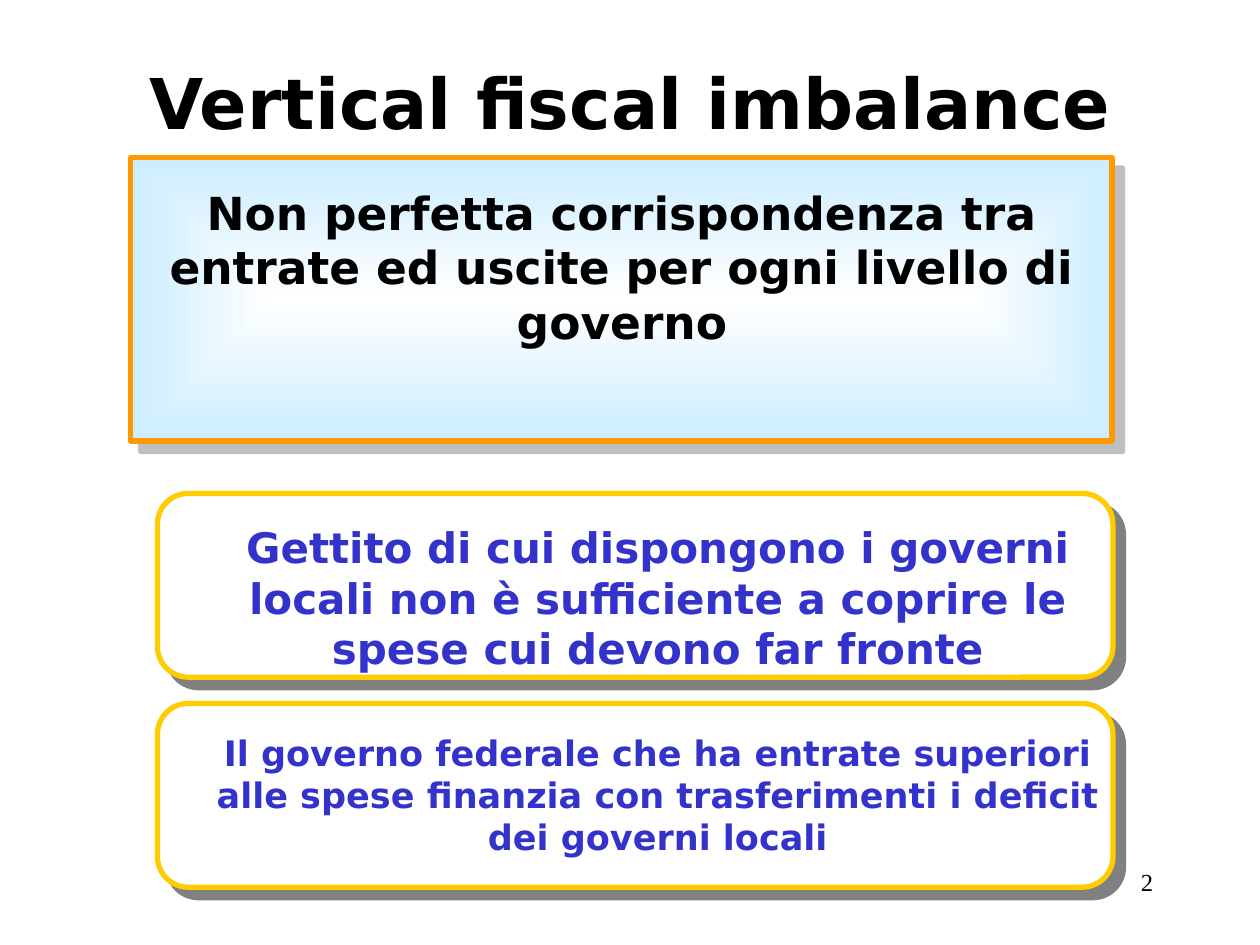
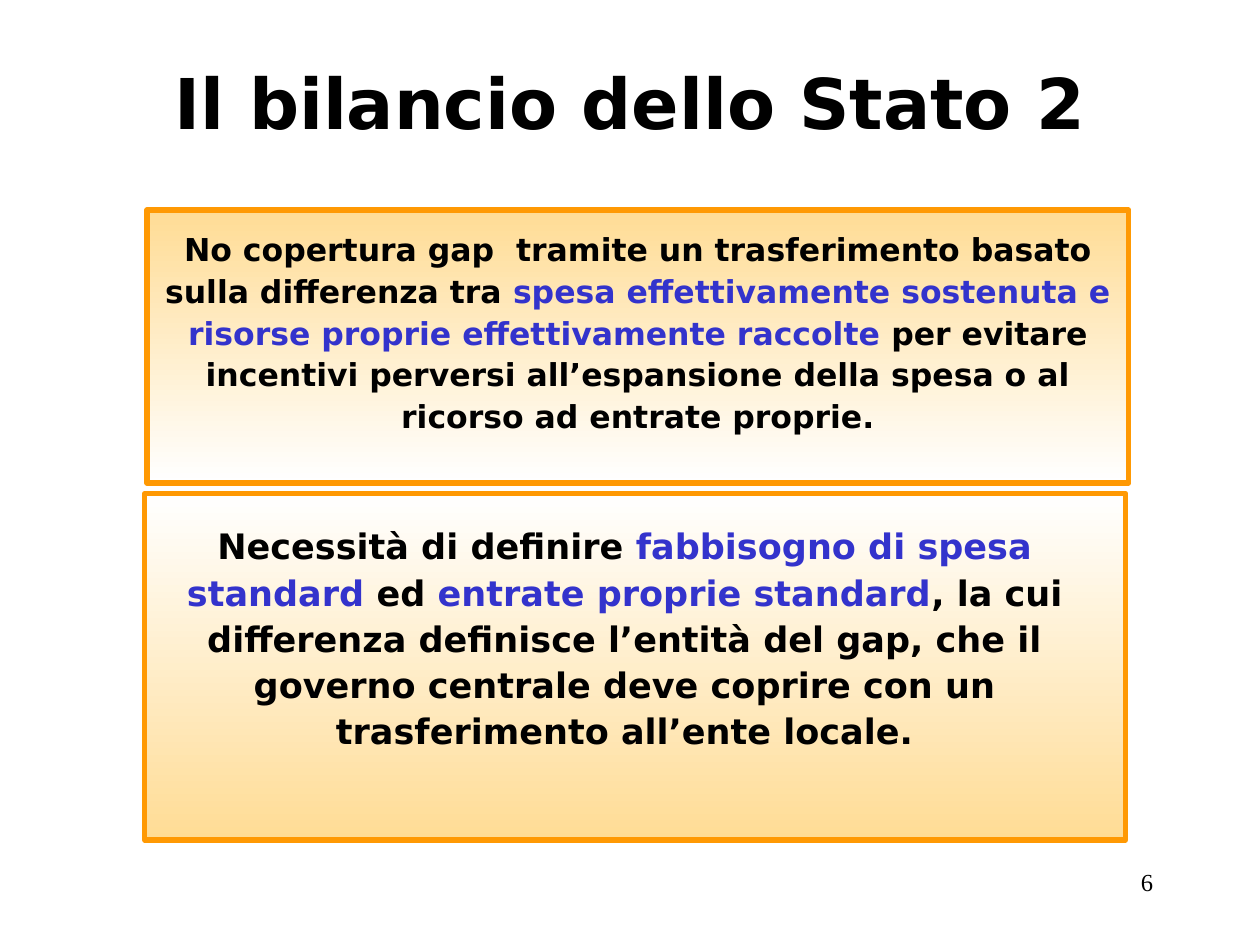
import pptx
import pptx.util
import pptx.dml.color
import pptx.enum.shapes
import pptx.enum.text
import pptx.oxml
import pptx.oxml.ns
from dataclasses import dataclass

Shape = pptx.enum.shapes.MSO_SHAPE
Align = pptx.enum.text.PP_ALIGN
Anchor = pptx.enum.text.MSO_ANCHOR
Fit = pptx.enum.text.MSO_AUTO_SIZE
Pt = pptx.util.Pt
NS = pptx.oxml.ns.nsdecls("a")


@dataclass(frozen=True)
class Theme:
    sans: str = "DejaVu Sans"
    serif: str = "Times New Roman"
    black: str = "000000"
    white: str = "FFFFFF"
    blue: str = "3333CC"
    sky: str = "CCECFF"
    sand: str = "FFDC95"
    orange: str = "FF9903"
    gold: str = "FFCC00"
    gray: str = "808080"
    title: int = 40
    lead: int = 26
    large: int = 24
    body: int = 20
    small: int = 18
    number: int = 14
    edge: int = 3
    drop: float = 8.5


T = Theme()

# The slide is a grid of 120 columns by 90 rows
WIDTH, HEIGHT = pptx.util.Inches(10), pptx.util.Inches(7.5)
COLS, ROWS = 120, 90


def grid(col, row, wide, high):
    cell = WIDTH / COLS, HEIGHT / ROWS
    return [round(n * cell[i % 2]) for i, n in enumerate((col, row, wide, high))]


def rgb(code):
    return pptx.dml.color.RGBColor.from_string(code)


def place(shape, area):
    for name, size in zip(("left", "top", "width", "height"), grid(*area)):
        setattr(shape, name, size)


# Text: runs are (words, colour) pairs in one paragraph
def write(shape, runs, size, face=T.sans, bold=True, align=Align.CENTER,
          space=None, **frame):
    text = shape.text_frame
    for name, value in {"word_wrap": True, **frame}.items():
        setattr(text, name, value)
    para = text.paragraphs[0]
    para.alignment = align
    if space:
        para.line_spacing = space
    for words, color in runs:
        run = para.add_run()
        run.text = words
        look = {"name": face, "size": Pt(size), "bold": bold}
        for name, value in look.items():
            setattr(run.font, name, value)
        run.font.color.rgb = rgb(color)


# Fills and shadows
def blend(shape, first, last, center=False):
    fill = shape.fill
    fill.gradient()
    for stop, color, spot in zip(fill.gradient_stops, (first, last), (0, 1)):
        stop.color.rgb = rgb(color)
        stop.position = spot
    fill.gradient_angle = 270
    if center:
        line = shape._element.spPr.find(".//" + pptx.oxml.ns.qn("a:lin"))
        line.getparent().replace(line, pptx.oxml.parse_xml(
            f'<a:path {NS} path="rect"><a:fillToRect l="50000" t="50000" '
            'r="50000" b="50000"/></a:path>'))


def shade(shape, alpha):
    effect = shape._element.spPr.find(pptx.oxml.ns.qn("a:effectLst"))
    effect.append(pptx.oxml.parse_xml(
        f'<a:outerShdw {NS} blurRad="0" dist="{Pt(T.drop)}" dir="2700000" '
        f'algn="ctr" rotWithShape="0"><a:srgbClr val="{T.gray}">'
        f'<a:alpha val="{alpha * 1000}"/></a:srgbClr></a:outerShdw>'))


# A framed panel grouped with its own text box
def panel(slide, area, label, runs, size, fill, edge=T.orange,
          kind=Shape.RECTANGLE, center=False, shadow=0, space=None):
    group = slide.shapes.add_group_shape()
    box = group.shapes.add_shape(kind, *grid(*area))
    box.shadow.inherit = False
    if len(fill) == 2:
        blend(box, *fill, center=center)
    else:
        box.fill.solid()
        box.fill.fore_color.rgb = rgb(fill[0])
    box.line.color.rgb = rgb(edge)
    box.line.width = Pt(T.edge)
    if shadow:
        shade(box, shadow)
    text = group.shapes.add_textbox(*grid(*label))
    write(text, runs, size, space=space, auto_size=Fit.SHAPE_TO_FIT_TEXT)


# Title and slide number, alike on every slide
def start(deck, title, number):
    slide = deck.slides.add_slide(deck.slide_layouts[5])
    head = slide.shapes.title
    place(head, (0, 5, COLS, 9.25))
    write(head, [(title, T.black)], T.title, vertical_anchor=Anchor.MIDDLE,
          auto_size=Fit.NONE)
    foot = slide.shapes.add_textbox(*grid(86, 82, 25, 6))
    write(foot, [(number, T.black)], T.number, T.serif, False, Align.RIGHT)
    return slide


def gap(deck):
    slide = start(deck, "Vertical fiscal imbalance", "2")
    panel(slide, (12.4, 15, 93.5, 27), (12, 17, 94.5, 16.8),
          [("Non perfetta corrispondenza tra entrate ed uscite per ogni "
            "livello di governo", T.black)],
          T.lead, (T.white, T.sky), center=True, shadow=50)
    # Rounded cards at an equal step
    cards = [
        ("Gettito di cui dispongono i governi locali non è sufficiente a "
         "coprire le spese cui devono far fronte", T.large, 15.6),
        ("Il governo federale che ha entrate superiori alle spese finanzia "
         "con trasferimenti i deficit dei governi locali", T.body, 13.3),
    ]
    for i, (words, size, high) in enumerate(cards):
        row = 47 + 20 * i
        panel(slide, (15, row, 91, 17.5), (18.25, row + 2.1, 88.8, high),
              [(words, T.blue)], size, (T.white,), T.gold,
              Shape.ROUNDED_RECTANGLE, shadow=100)


def budget(deck):
    slide = start(deck, "Il bilancio dello Stato 2", "6")
    panel(slide, (13.8, 47, 93.4, 33), (12, 49, 95, 23), [
        ("Necessità di definire ", T.black),
        ("fabbisogno di spesa standard", T.blue),
        (" ed ", T.black),
        ("entrate proprie standard", T.blue),
        (", la cui differenza definisce l’entità del gap, che il governo "
         "centrale deve coprire con un trasferimento all’ente locale.", T.black),
    ], T.body, (T.white, T.sand), space=1.1)
    panel(slide, (14, 20, 93.5, 26), (14, 21, 93.5, 20.9), [
        ("No copertura gap  tramite un trasferimento basato sulla "
         "differenza tra ", T.black),
        ("spesa effettivamente sostenuta e risorse proprie effettivamente "
         "raccolte ", T.blue),
        ("per evitare incentivi perversi all’espansione della spesa o al "
         "ricorso ad entrate proprie.", T.black),
    ], T.small, (T.sand, T.white), space=1.1)


def main():
    deck = pptx.Presentation()
    deck.slide_width, deck.slide_height = WIDTH, HEIGHT
    gap(deck)
    budget(deck)
    deck.save("out.pptx")


if __name__ == "__main__":
    main()
